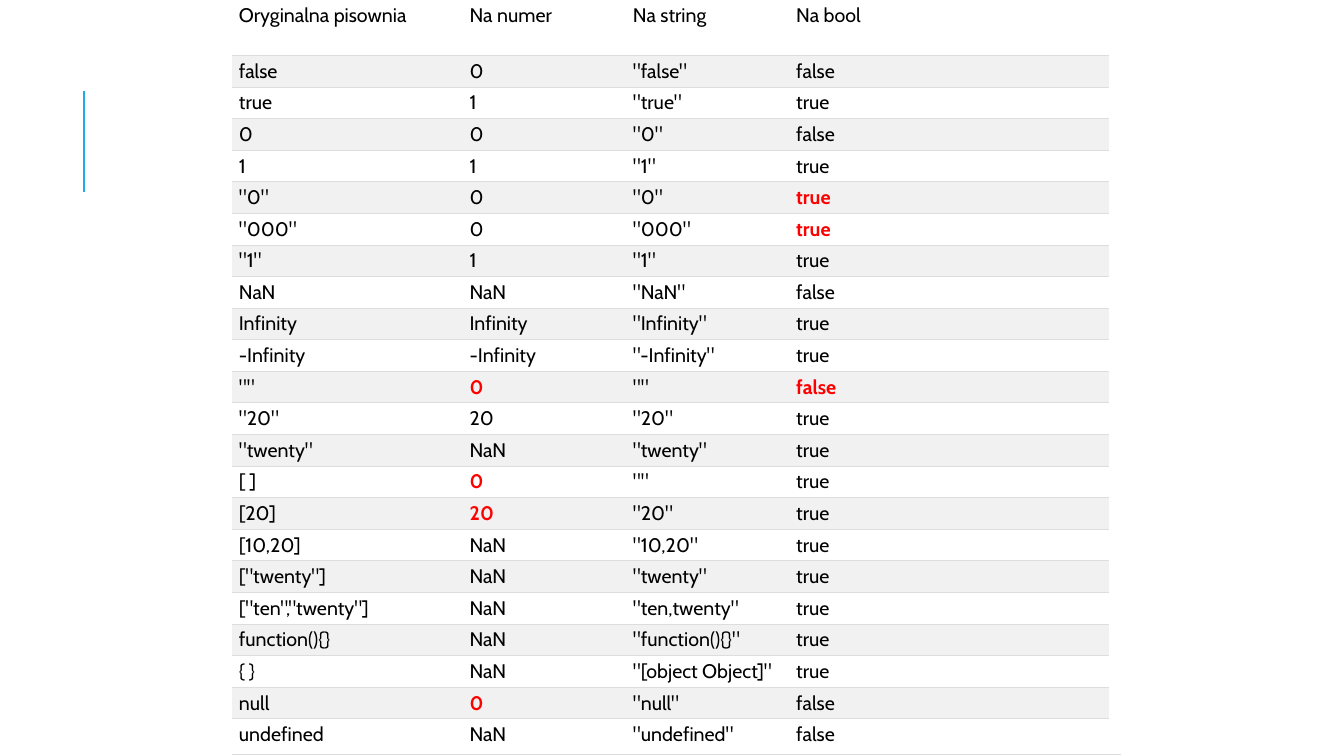
import pptx
import pptx.dml.color
import pptx.enum.shapes
import pptx.oxml
import pptx.oxml.ns
import pptx.util

Inches = pptx.util.Inches
Pt = pptx.util.Pt
RGBColor = pptx.dml.color.RGBColor

CONVERSIONS = [
    ('Oryginalna pisownia', 'Na numer', 'Na string', 'Na bool'),
    ('false', '0', '"false"', 'false'),
    ('true', '1', '"true"', 'true'),
    ('0', '0', '"0"', 'false'),
    ('1', '1', '"1"', 'true'),
    ('"0"', '0', '"0"', 'true'),
    ('"000"', '0', '"000"', 'true'),
    ('"1"', '1', '"1"', 'true'),
    ('NaN', 'NaN', '"NaN"', 'false'),
    ('Infinity', 'Infinity', '"Infinity"', 'true'),
    ('-Infinity', '-Infinity', '"-Infinity"', 'true'),
    ('""', '0', '""', 'false'),
    ('"20"', '20', '"20"', 'true'),
    ('"twenty"', 'NaN', '"twenty"', 'true'),
    ('[ ]', '0', '""', 'true'),
    ('[20]', '20', '"20"', 'true'),
    ('[10,20]', 'NaN', '"10,20"', 'true'),
    ('["twenty"]', 'NaN', '"twenty"', 'true'),
    ('["ten","twenty"]', 'NaN', '"ten,twenty"', 'true'),
    ('function(){}', 'NaN', '"function(){}"', 'true'),
    ('{ }', 'NaN', '"[object Object]"', 'true'),
    ('null', '0', '"null"', 'false'),
    ('undefined', 'NaN', '"undefined"', 'false'),
]
SURPRISES = {(5, 3), (6, 3), (11, 1), (11, 3), (14, 1), (15, 1), (21, 1)}

COLUMN_WIDTHS = [2.32, 1.62, 1.62, 3.14, 0.1]
HEADER_HEIGHT = 0.55
ROW_HEIGHT = 0.31
TABLE_LEFT = 2.3
INSET = Pt(2.75)
FIRST_INSET = Inches(0.07)

BLACK = RGBColor(0x00, 0x00, 0x00)
RED = RGBColor(0xFF, 0x00, 0x00)
WHITE = RGBColor(0xFF, 0xFF, 0xFF)
BAND = RGBColor(0xF1, 0xF1, 0xF1)
RULE = RGBColor(0xDD, 0xDD, 0xDD)
ACCENT = RGBColor(0x1C, 0xAD, 0xE4)


def write(frame, text, color=BLACK, bold=False, size=14, font="Cabin"):
    run = frame.paragraphs[0].add_run()
    run.text = text
    run.font.name = font
    run.font.size = Pt(size)
    run.font.bold = bold
    run.font.color.rgb = color


def set_borders(cell, ruled):
    properties = cell._tc.get_or_add_tcPr()
    namespace = pptx.oxml.ns.nsdecls("a")
    for index, side in enumerate("LRTB"):
        if side in ruled:
            paint = f'<a:solidFill><a:srgbClr val="{RULE}"/></a:solidFill>'
        else:
            paint = "<a:noFill/>"
        border = f'<a:ln{side} {namespace} w="{Pt(0.75)}">{paint}</a:ln{side}>'
        properties.insert(index, pptx.oxml.parse_xml(border))


def add_accent_line(slide):
    accent = slide.shapes.add_connector(
        pptx.enum.shapes.MSO_CONNECTOR.STRAIGHT,
        Inches(0.83), Inches(1.9), Inches(0.83), Inches(0.9))
    accent.line.color.rgb = ACCENT
    accent.line.width = Pt(1.5)
    accent._element.spPr.append(
        pptx.oxml.parse_xml(f'<a:effectLst {pptx.oxml.ns.nsdecls("a")}/>'))


def add_conversion_table(slide):
    heights = [HEADER_HEIGHT] + [ROW_HEIGHT] * (len(CONVERSIONS) - 1)
    table = slide.shapes.add_table(
        len(heights), len(COLUMN_WIDTHS), Inches(TABLE_LEFT), 0,
        Inches(sum(COLUMN_WIDTHS)), Inches(sum(heights))).table
    table.first_row = False
    table.horz_banding = False
    for column, width in zip(table.columns, COLUMN_WIDTHS):
        column.width = Inches(width)

    margin_column = len(COLUMN_WIDTHS) - 1
    for r, values in enumerate(CONVERSIONS):
        table.rows[r].height = Inches(heights[r])
        for c, value in enumerate(values + ("",)):
            cell = table.cell(r, c)
            cell.margin_left = FIRST_INSET if c == 0 else INSET
            cell.margin_right = cell.margin_top = cell.margin_bottom = INSET
            cell.fill.solid()
            banded = r % 2 == 1 and c != margin_column
            cell.fill.fore_color.rgb = BAND if banded else WHITE
            set_borders(cell, "B" if r == 0 else "TB")
            surprise = (r, c) in SURPRISES
            write(cell.text_frame, value,
                  color=RED if surprise else BLACK, bold=surprise)
    table.cell(0, margin_column).merge(
        table.cell(len(heights) - 1, margin_column))


def main():
    deck = pptx.Presentation()
    deck.slide_width = Inches(13.33)
    deck.slide_height = Inches(7.5)
    slide = deck.slides.add_slide(deck.slide_layouts[6])
    add_accent_line(slide)
    add_conversion_table(slide)
    deck.save("out.pptx")


if __name__ == "__main__":
    main()
